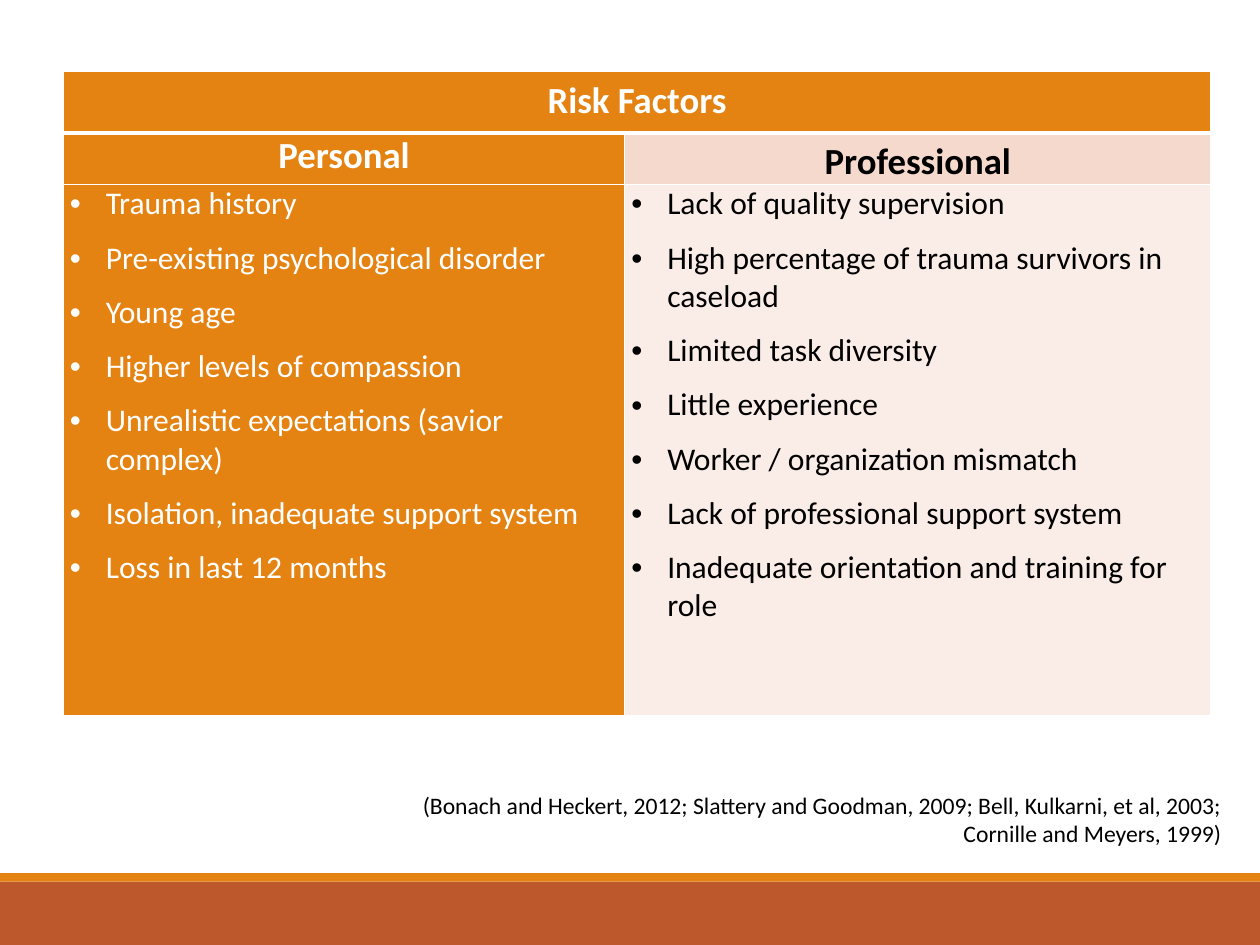
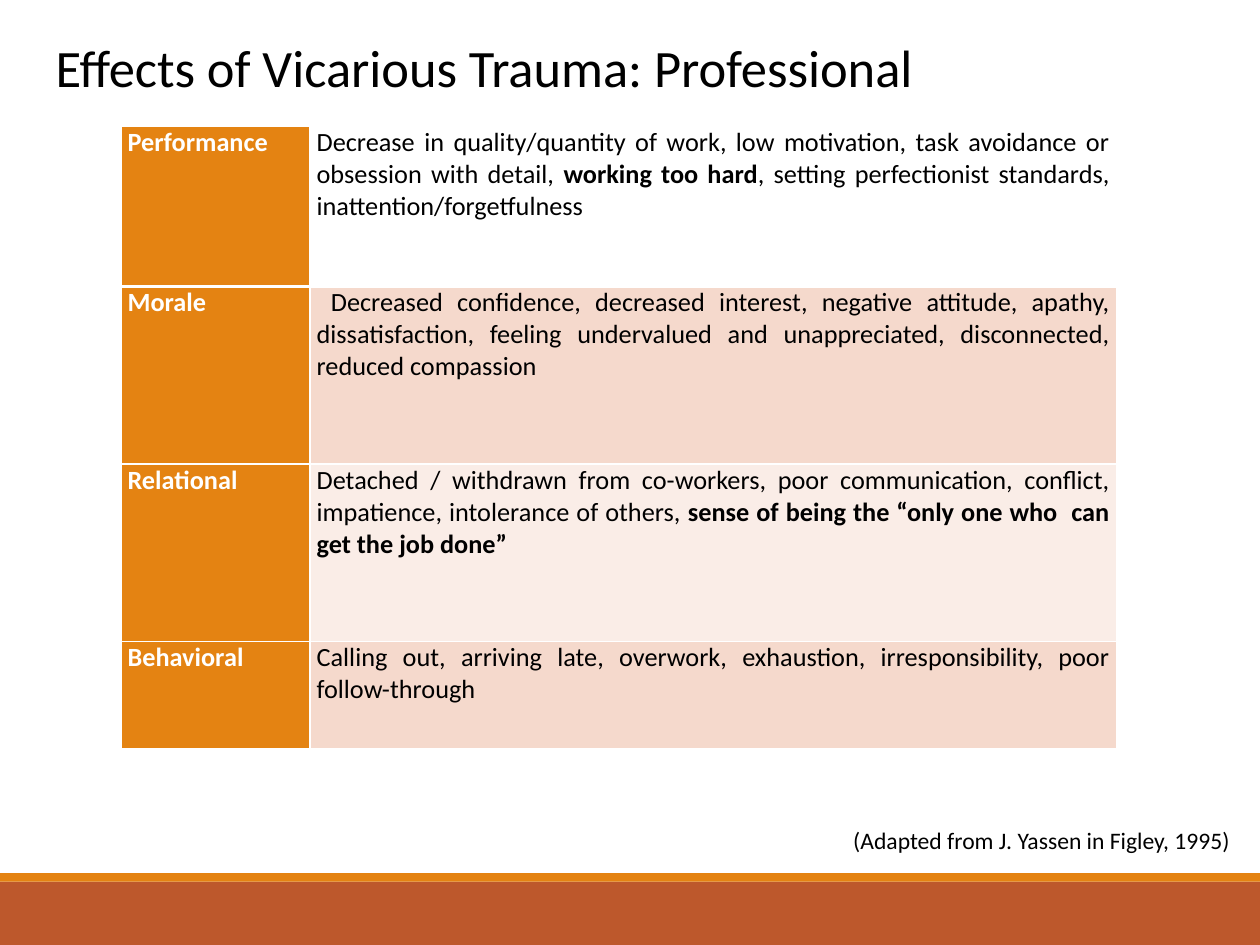
from lxml import etree
from pptx import Presentation
from pptx import util as u
from pptx.dml import color
from pptx.enum import shapes, text
from pptx.oxml import ns

ORANGE, RUST, ROSE, BLUSH = "E48312", "BD582C", "F5D9CC", "FAEDE7"
WHITE, BLACK = "FFFFFF", "000000"
ALIGN = text.PP_ALIGN


def rgb(value):
    return color.RGBColor.from_string(value)


def write(frame, lines, look):
    """Write one paragraph per line; ** switches bold on and off."""
    for number, line in enumerate(lines):
        para = frame.paragraphs[0] if number == 0 else frame.add_paragraph()
        for name, value in look.get("para", {}).items():
            setattr(para, name, value)
        if look.get("bullet"):
            props = para._p.get_or_add_pPr()
            props.set("marL", str(u.Inches(0.38)))
            props.set("indent", str(-u.Inches(0.38)))
            etree.SubElement(props, ns.qn("a:buFont")).set("typeface", "Arial")
            etree.SubElement(props, ns.qn("a:buChar")).set("char", "•")
        for part, words in enumerate(line.split("**")):
            if words:
                span = para.add_run()
                span.text = words
                font = {"name": "Calibri", "size": u.Pt(look["size"]),
                        "bold": look.get("bold", False) or part % 2 == 1}
                for name, value in font.items():
                    setattr(span.font, name, value)
                span.font.color.rgb = rgb(look.get("color", BLACK))


# Text looks
spaced = {"space_before": u.Pt(6), "space_after": u.Pt(6)}
centred = {"alignment": ALIGN.CENTER, "line_spacing": 1.15}
banner = {"size": 28, "bold": True, "color": WHITE, "para": centred}
personal_head = {**banner, "para": {"alignment": ALIGN.CENTER, **spaced}}
professional_head = {**banner, "color": BLACK}
bullets = {"size": 24, "bullet": True, "para": spaced}
row_label = {"size": 20, "bold": True, "color": WHITE}
row_text = {"size": 20, "para": {"alignment": ALIGN.JUSTIFY}}
title_look = {"size": 40}
source_look = {"size": 18, "para": {"alignment": ALIGN.RIGHT}}
loose_source = {"size": 18, "para": {"alignment": ALIGN.RIGHT, "line_spacing": 1.1}}

# Table contents: each cell is (lines, look, fill)
personal = [
    "Trauma history", "Pre-existing psychological disorder", "Young age",
    "Higher levels of compassion", "Unrealistic expectations (savior complex)",
    "Isolation, inadequate support system", "Loss in last 12 months",
]
professional = [
    "Lack of quality supervision", "High percentage of trauma survivors in caseload",
    "Limited task diversity", "Little experience", "Worker / organization mismatch",
    "Lack of professional support system", "Inadequate orientation and training for role",
]
risk_rows = [
    [(["Risk Factors"], banner, ORANGE), ([], banner, ORANGE)],
    [(["Personal"], personal_head, ORANGE), (["Professional"], professional_head, ROSE)],
    [(personal, {**bullets, "color": WHITE}, ORANGE), (professional, bullets, BLUSH)],
]
effects = [
    ("Performance", WHITE, "Decrease in quality/quantity of work, low motivation, task avoidance or "
     "obsession with detail, **working too hard**, setting perfectionist standards, "
     "inattention/forgetfulness"),
    ("Morale", ROSE, " Decreased confidence, decreased interest, negative attitude, apathy, "
     "dissatisfaction, feeling undervalued and unappreciated, disconnected, reduced compassion"),
    ("Relational", BLUSH, "Detached / withdrawn from co-workers, poor communication, conflict, "
     "impatience, intolerance of others, **sense of being the “only one who  can get the job done”**"),
    ("Behavioral", ROSE, "Calling out, arriving late, overwork, exhaustion, irresponsibility, "
     "poor follow-through"),
]
effect_rows = [[([label], row_label, ORANGE), ([words], row_text, fill)]
               for label, fill, words in effects]

pages = [
    {"rows": risk_rows, "corner": (0.67, 0.76), "widths": [5.94, 6.2],
     "heights": [0.65, 0.52, 5.62],
     "boxes": [((4.29, 8.32, 8.73, 0.71),
                "(Bonach and Heckert, 2012; Slattery and Goodman, 2009; Bell, Kulkarni, et al, 2003; "
                "Cornille and Meyers, 1999)", source_look)]},
    {"rows": effect_rows, "corner": (1.28, 1.34), "widths": [2, 8.53],
     "heights": [1.69, 1.88, 1.88, 1.13],
     "boxes": [((0.49, 0.32, 10.07, 0.77), "Effects of Vicarious Trauma: Professional", title_look),
               ((6.44, 8.66, 6.67, 0.42), "(Adapted from J. Yassen in Figley, 1995)", loose_source)]},
]

deck = Presentation()
deck.slide_width, deck.slide_height = u.Inches(13.33), u.Inches(10)

for content in pages:
    page = deck.slides.add_slide(deck.slide_layouts[6])

    # Bands at the foot
    for top, height, fill in [(9.33, 0.67, RUST), (9.24, 0.09, ORANGE)]:
        band = page.shapes.add_shape(shapes.MSO_SHAPE.RECTANGLE, 0, u.Inches(top),
                                     deck.slide_width, u.Inches(height))
        band.shadow.inherit = False
        band.fill.solid()
        band.fill.fore_color.rgb = rgb(fill)
        band.line.fill.background()

    # Table
    widths, heights = content["widths"], content["heights"]
    place = [u.Inches(n) for n in (*content["corner"], sum(widths), sum(heights))]
    table = page.shapes.add_table(len(heights), len(widths), *place).table
    table.first_row = table.horz_banding = False
    for column, width in zip(table.columns, widths):
        column.width = u.Inches(width)
    for row, height in zip(table.rows, heights):
        row.height = u.Inches(height)
    for r, cells in enumerate(content["rows"]):
        for c, (lines, look, fill) in enumerate(cells):
            cell = table.cell(r, c)
            margins = {"margin_left": 0.07, "margin_right": 0.07, "margin_top": 0, "margin_bottom": 0}
            for name, value in margins.items():
                setattr(cell, name, u.Inches(value))
            # White rules, thicker below the first row
            for side in "LRTB":
                thick = (r, side) in [(0, "B"), (1, "T")]
                rule = etree.SubElement(cell._tc.get_or_add_tcPr(), ns.qn(f"a:ln{side}"))
                rule.set("w", str(u.Pt(3 if thick else 1)))
                paint = etree.SubElement(rule, ns.qn("a:solidFill"))
                etree.SubElement(paint, ns.qn("a:srgbClr")).set("val", WHITE)
            cell.fill.solid()
            cell.fill.fore_color.rgb = rgb(fill)
            write(cell.text_frame, lines, look)
    if content["rows"] is risk_rows:
        table.cell(0, 0).merge(table.cell(0, 1))

    # Title and source
    for place, words, look in content["boxes"]:
        box = page.shapes.add_textbox(*[u.Inches(n) for n in place])
        box.text_frame.word_wrap = True
        box.text_frame.auto_size = text.MSO_AUTO_SIZE.SHAPE_TO_FIT_TEXT
        write(box.text_frame, [words], look)
        if look is title_look:
            # Soft shadow behind the title letters
            props = box.text_frame.paragraphs[0].runs[0].font._element
            effect = etree.Element(ns.qn("a:effectLst"))
            shadow = etree.SubElement(effect, ns.qn("a:outerShdw"))
            for name, value in {"blurRad": u.Pt(4), "dist": u.Pt(3), "dir": 18900000}.items():
                shadow.set(name, str(value))
            tint = etree.SubElement(shadow, ns.qn("a:srgbClr"))
            tint.set("val", BLACK)
            etree.SubElement(tint, ns.qn("a:alpha")).set("val", "50000")
            props.find(ns.qn("a:latin")).addprevious(effect)

deck.save("out.pptx")
